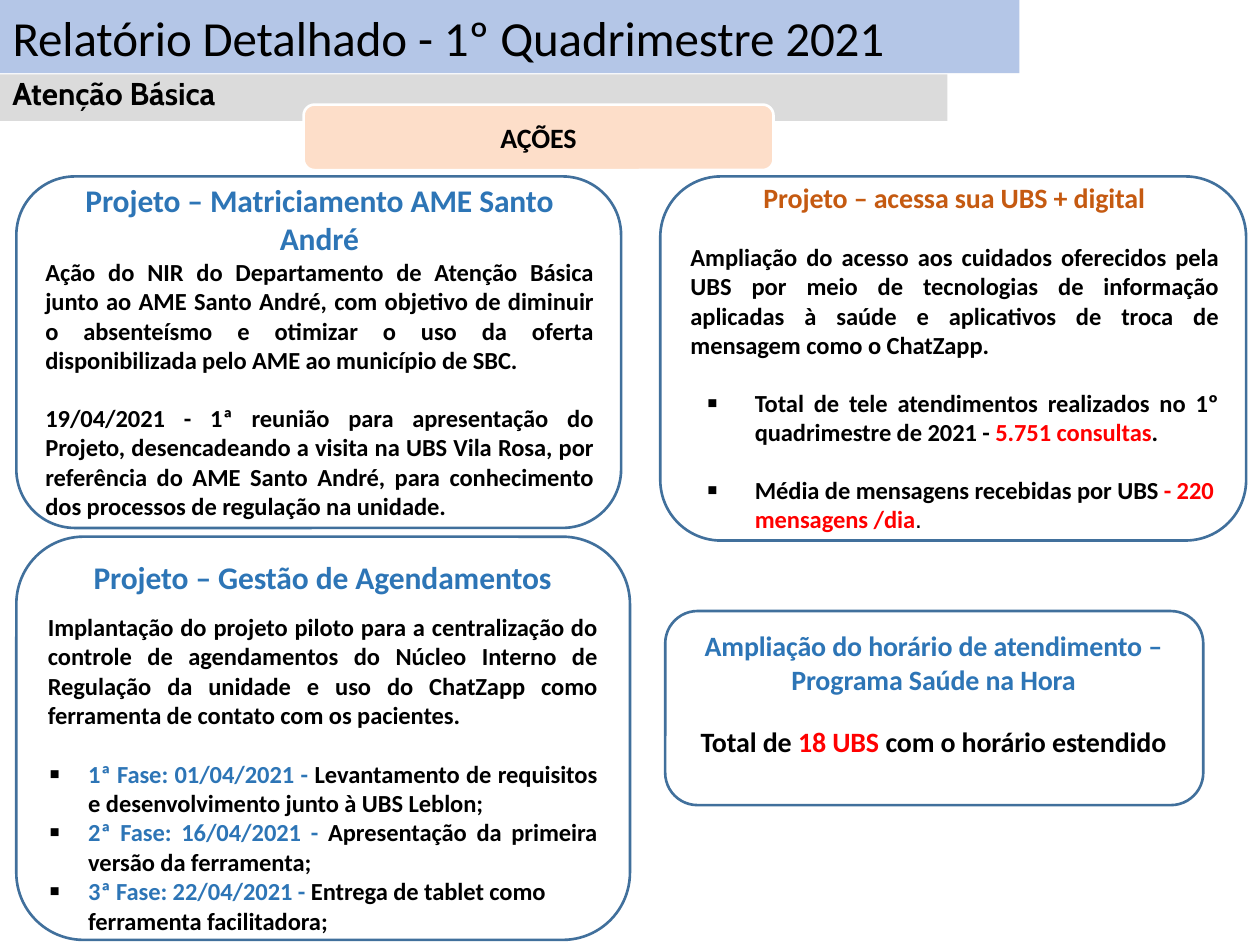
from lxml import etree
from pptx import Presentation
from pptx import util as u
from pptx.dml.color import RGBColor
from pptx.enum import shapes, text
from pptx.oxml.ns import qn

BLACK, BLUE, ORANGE, RED, EDGE = "000000", "2D75B6", "C55A11", "FF0000", "41709C"
LEFT, CENTER, JUSTIFY = text.PP_ALIGN.LEFT, text.PP_ALIGN.CENTER, text.PP_ALIGN.JUSTIFY

TITLE = "Relatório Detalhado - 1º Quadrimestre 2021"
SUBTITLE = "Atenção Básica"
TAG = "AÇÕES"

PANELS = [(0.13, 1.4, 4.8, 2.79), (5.24, 1.4, 4.65, 2.89),
          (5.28, 4.85, 4.27, 1.54), (0.13, 4.26, 4.87, 3.2)]

# Each paragraph: size, alignment, space before, runs
TEXTS = [
    ((0.36, 1.44, 4.35, 2.71), [
        (18, CENTER, 0, [("Projeto – Matriciamento AME Santo", BLUE), ("\v",), ("André", BLUE)]),
        (14, JUSTIFY, 0, [("Ação do NIR do Departamento de Atenção Básica junto ao AME Santo André, "
                           "com objetivo de diminuir o absenteísmo e otimizar o uso da oferta "
                           "disponibilizada pelo AME ao município de SBC.",)]),
        (14, JUSTIFY, 16, [("19/04/2021 - 1ª reunião para apresentação do Projeto, desencadeando a "
                            "visita na UBS Vila Rosa, por referência do AME Santo André, para "
                            "conhecimento dos processos de regulação na unidade.",)]),
    ]),
    ((5.48, 1.43, 4.19, 1.45), [
        (16, CENTER, 0, [("Projeto – acessa sua UBS + digital", ORANGE)]),
        (14, JUSTIFY, 16, [("Ampliação do acesso aos cuidados oferecidos pela UBS por meio de "
                            "tecnologias de informação aplicadas à saúde e aplicativos de troca de "
                            "mensagem como o ChatZapp.",)]),
    ]),
    ((5.4, 4.99, 4.02, 1.05), [
        (16, CENTER, 0, [("Ampliação do horário de atendimento –", BLUE), ("\v",),
                         ("Programa Saúde na Hora", BLUE)]),
        (16, CENTER, 16.5, [("Total de ",), ("18 UBS ", RED), ("com o horário estendido",)]),
    ]),
    ((0.38, 4.43, 4.36, 1.38), [
        (18, CENTER, 0, [("Projeto – Gestão de Agendamentos", BLUE)]),
        (14, JUSTIFY, 9, [("Implantação do projeto piloto para a centralização do controle de "
                           "agendamentos do Núcleo Interno de Regulação da unidade e uso do ChatZapp "
                           "como ferramenta de contato com os pacientes.",)]),
    ]),
]

LISTS = [
    ((5.6, 3.08, 4.07, 1.19), 0.39, [
        (14, JUSTIFY, 0, [("Total de tele atendimentos realizados no 1º quadrimestre de 2021 - ",),
                          ("5.751 consultas", RED), (".",)]),
        (14, LEFT, 16, [("Média de mensagens recebidas por UBS ",),
                        ("- 220 mensagens /dia", RED),
                        (".", BLACK, {"name": "Arial", "bold": False})]),
    ]),
    ((0.38, 6.02, 4.36, 1.42), 0.32, [
        (14, JUSTIFY, 0, [("1ª Fase: 01/04/2021 - ", BLUE),
                          ("Levantamento de requisitos e desenvolvimento junto à UBS Leblon;",)]),
        (14, JUSTIFY, 0, [("2ª Fase: 16/04/2021 - ", BLUE),
                          ("Apresentação da primeira versão da ferramenta;",)]),
        (14, LEFT, 0, [("3ª Fase: 22/04/2021 - ", BLUE),
                       ("Entrega de tablet como ferramenta facilitadora;",)]),
    ]),
]


def rgb(value):
    return RGBColor.from_string(value)


def apply(obj, values):
    for name, value in values.items():
        setattr(obj, name, value)


def place(sp, box):
    apply(sp, dict(zip(("left", "top", "width", "height"), map(u.Inches, box))))


def add_bullet(p, indent):
    pPr = p._p.get_or_add_pPr()
    pPr.set("marL", str(u.Inches(indent)))
    pPr.set("indent", str(-u.Inches(indent - 0.01)))
    color = etree.SubElement(pPr, qn("a:buClr"))
    etree.SubElement(color, qn("a:srgbClr"), val=BLACK)
    etree.SubElement(pPr, qn("a:buSzPct"), val="129000")
    etree.SubElement(pPr, qn("a:buFont"), typeface="Arial")
    etree.SubElement(pPr, qn("a:buChar"), char="▪")


def write(sp, paragraphs, indent=None, anchor=text.MSO_ANCHOR.TOP, margin=0, **font):
    tf = sp.text_frame
    apply(tf, {"word_wrap": True, "auto_size": text.MSO_AUTO_SIZE.NONE,
               "vertical_anchor": anchor, "margin_left": u.Inches(margin),
               "margin_top": 0, "margin_right": 0, "margin_bottom": 0})
    for i, (size, align, before, runs) in enumerate(paragraphs):
        p = tf.add_paragraph() if i else tf.paragraphs[0]
        if indent:
            add_bullet(p, indent)
        apply(p, {"alignment": align, "space_before": u.Pt(before)})
        for content, *style in runs:
            if content == "\v":
                p.add_line_break()
                continue
            r = p.add_run()
            r.text = content
            r._r.get_or_add_rPr().set("spc", "-5")
            values = {"name": "Calibri", "size": u.Pt(size), "bold": True, **font}
            apply(r.font, {**values, **(style[1] if len(style) > 1 else {})})
            r.font.color.rgb = rgb(style[0] if style else BLACK)


def add_box(s, kind, box, fill=None, line=None):
    sp = s.shapes.add_shape(kind, *map(u.Inches, box))
    sp.shadow.inherit = False
    if fill:
        sp.fill.solid()
        sp.fill.fore_color.rgb = rgb(fill)
    else:
        sp.fill.background()
    if line:
        sp.line.color.rgb = rgb(line)
        sp.line.width = u.Pt(1.5)
    else:
        sp.line.fill.background()
    return sp


def main():
    prs = Presentation()
    prs.slide_width, prs.slide_height = u.Inches(10), u.Inches(7.5)
    s = prs.slides.add_slide(prs.slide_layouts[3])
    title, *bodies = s.placeholders
    rect, rounded = shapes.MSO_SHAPE.RECTANGLE, shapes.MSO_SHAPE.ROUNDED_RECTANGLE
    middle = text.MSO_ANCHOR.MIDDLE

    place(title, (0, 0, 8.09, 0.58))
    title.fill.solid()
    title.fill.fore_color.rgb = rgb("B4C6E7")
    write(title, [(28, LEFT, 0, [(TITLE,)])], anchor=middle, margin=0.1, bold=False)

    sp = add_box(s, rect, (0, 0.59, 7.52, 0.37), "DBDBDB")
    write(sp, [(18, LEFT, 0, [(SUBTITLE,)])], margin=0.1, name="Cabin")
    sp.text_frame.paragraphs[0].line_spacing = u.Pt(21.4)

    sp = add_box(s, rounded, (2.41, 0.83, 3.73, 0.52), "FDDEC9", "FFFFFF")
    write(sp, [(16, CENTER, 0, [(TAG,)])], anchor=middle)

    for box in PANELS:
        add_box(s, rounded, box, line=EDGE).adjustments[0] = 1 / 6

    for box, paragraphs in TEXTS:
        write(s.shapes.add_textbox(*map(u.Inches, box)), paragraphs)

    for body, (box, indent, paragraphs) in zip(bodies, LISTS):
        place(body, box)
        write(body, paragraphs, indent)

    prs.save("out.pptx")


if __name__ == "__main__":
    main()
